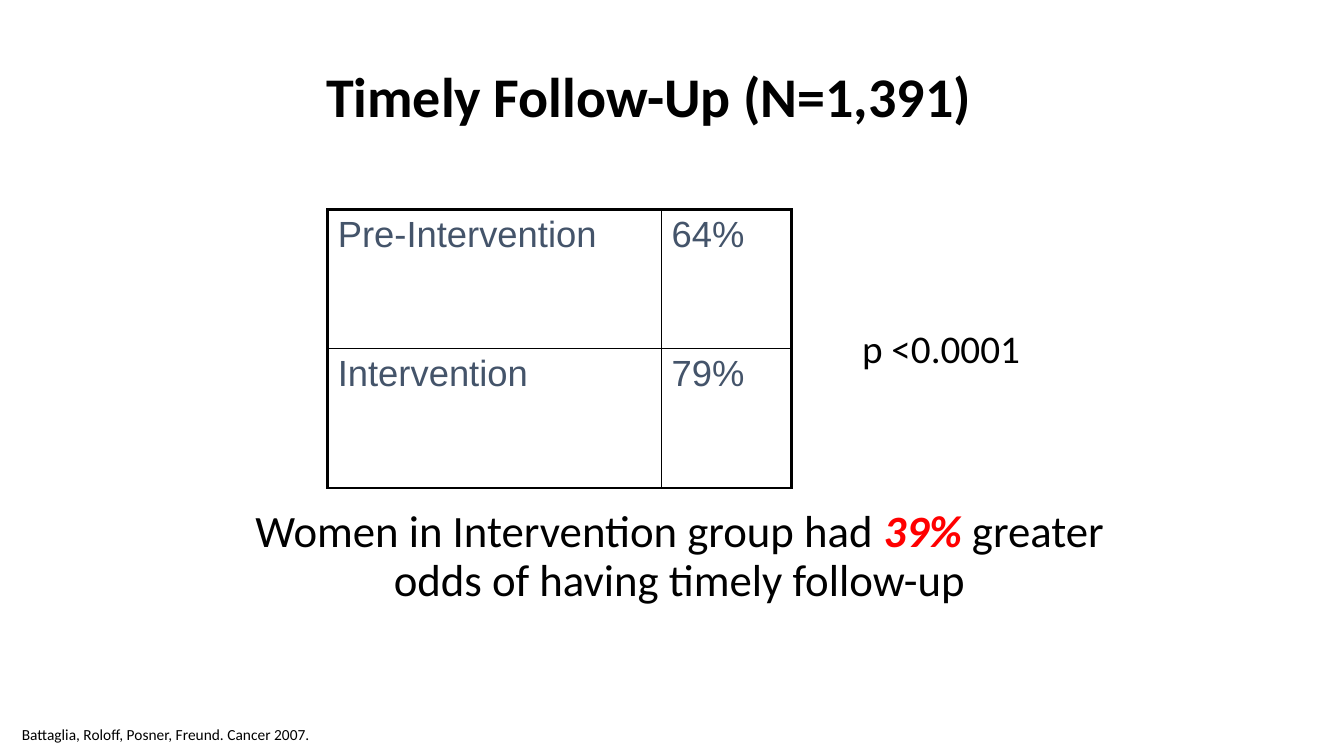
"""Build the slide on timely follow-up before and during the intervention."""
from dataclasses import dataclass

from lxml.etree import SubElement
from pptx import Presentation
from pptx.dml.color import RGBColor
from pptx.enum.text import MSO_ANCHOR, MSO_AUTO_SIZE, PP_ALIGN
from pptx.oxml.ns import qn
from pptx.slide import Slide
from pptx.table import _Cell
from pptx.text.text import Font
from pptx.util import Cm, Pt

BLACK, RED, SLATE = "000000", "FF0000", "44546A"
OUTER_WIDTH, INNER_WIDTH = 2.25, 1
COLUMN_WIDTHS = (8.41, 3.28)
ROW_HEIGHT = 3.51
ROWS = (("Pre-Intervention", "64%"), ("Intervention", "79%"))


@dataclass
class Note:
    left: float
    top: float
    width: float
    height: float
    size: float
    phrases: tuple[str, ...]
    alignment: PP_ALIGN = PP_ALIGN.CENTER
    line_spacing: float = 1.0
    emphasis: str = ""


NOTES = (
    Note(19.69, 8.05, 8.05, 1.45, 28, ("p <0.0001",)),
    Note(5.28, 12.7, 23.7, 3.66, 32,
         ("Women in Intervention group had ", "39%",
          " greater odds of having timely follow-up"),
         line_spacing=0.9, emphasis="39%"),
    Note(0.3, 18.16, 18.69, 1.19, 11,
         ("Battaglia, Roloff, Posner, Freund. Cancer 2007.",), PP_ALIGN.LEFT),
)


def set_font(font: Font, name: str, size: float, color: str) -> None:
    font.name = name
    font.size = Pt(size)
    font.color.rgb = RGBColor.from_string(color)


def add_title(slide: Slide) -> None:
    title = slide.shapes.title
    title.left, title.top, title.width, title.height = Cm(0.94), Cm(0.38), Cm(32.41), Cm(4.24)
    frame = title.text_frame
    frame.text = "Timely Follow-Up (N=1,391)"
    frame.auto_size = MSO_AUTO_SIZE.NONE
    frame.vertical_anchor = MSO_ANCHOR.MIDDLE
    frame.margin_right = Cm(1.85)
    paragraph = frame.paragraphs[0]
    paragraph.alignment = PP_ALIGN.CENTER
    paragraph.line_spacing = 0.9
    set_font(paragraph.font, "Calibri", 40, BLACK)
    paragraph.font.bold = True


def set_borders(cell: _Cell, outer_sides: dict[str, bool]) -> None:
    properties = cell._tc.get_or_add_tcPr()
    for side, is_outer in outer_sides.items():
        width = Pt(OUTER_WIDTH if is_outer else INNER_WIDTH)
        line = SubElement(properties, qn(f"a:ln{side}"), w=str(width))
        SubElement(SubElement(line, qn("a:solidFill")), qn("a:srgbClr"), val=BLACK)


def add_rate_table(slide: Slide) -> None:
    row_count, column_count = len(ROWS), len(COLUMN_WIDTHS)
    table = slide.shapes.add_table(
        row_count, column_count, Cm(8.26), Cm(5.28),
        Cm(sum(COLUMN_WIDTHS)), Cm(ROW_HEIGHT * row_count)).table
    table.first_row = table.horz_banding = False
    for column, width in zip(table.columns, COLUMN_WIDTHS):
        column.width = Cm(width)
    for row_index, texts in enumerate(ROWS):
        table.rows[row_index].height = Cm(ROW_HEIGHT)
        for column_index, text in enumerate(texts):
            cell = table.cell(row_index, column_index)
            cell.text = text
            set_font(cell.text_frame.paragraphs[0].font, "Arial", 26, SLATE)
            set_borders(cell, {
                "L": column_index == 0, "R": column_index == column_count - 1,
                "T": row_index == 0, "B": row_index == row_count - 1})
            cell.fill.background()


def add_note(slide: Slide, note: Note) -> None:
    box = slide.shapes.add_textbox(
        Cm(note.left), Cm(note.top), Cm(note.width), Cm(note.height))
    box.text_frame.word_wrap = True
    paragraph = box.text_frame.paragraphs[0]
    paragraph.alignment = note.alignment
    paragraph.line_spacing = note.line_spacing
    set_font(paragraph.font, "Calibri", note.size, BLACK)
    for phrase in note.phrases:
        run = paragraph.add_run()
        run.text = phrase
        if phrase == note.emphasis:
            set_font(run.font, "Calibri", note.size, RED)
            run.font.bold = run.font.italic = True


def main() -> None:
    presentation = Presentation()
    presentation.slide_width, presentation.slide_height = Cm(33.87), Cm(19.05)
    slide = presentation.slides.add_slide(presentation.slide_layouts.get_by_name("Title Only"))
    add_title(slide)
    add_rate_table(slide)
    for note in NOTES:
        add_note(slide, note)
    presentation.save("out.pptx")


if __name__ == "__main__":
    main()
